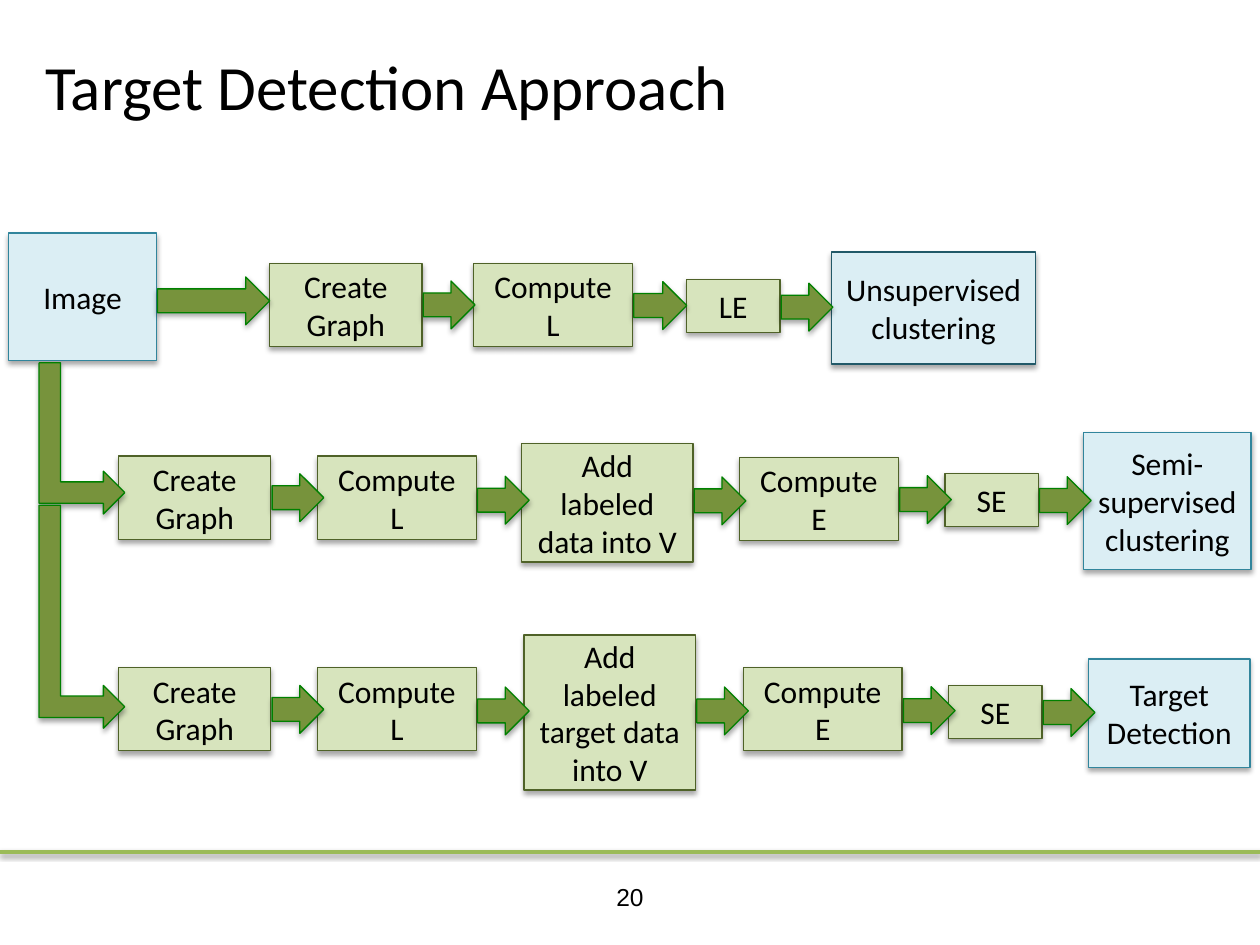
"""Build the target detection approach slide."""
from dataclasses import dataclass

from lxml import etree
from pptx import Presentation
from pptx.dml.color import RGBColor
from pptx.enum.shapes import MSO_CONNECTOR, MSO_SHAPE
from pptx.enum.text import MSO_ANCHOR, PP_ALIGN
from pptx.oxml.ns import qn
from pptx.util import Inches, Pt

RECTANGLE = MSO_SHAPE.RECTANGLE
RIGHT_ARROW = MSO_SHAPE.RIGHT_ARROW
BENT_ARROW = MSO_SHAPE.BENT_UP_ARROW
STRAIGHT = MSO_CONNECTOR.STRAIGHT
TOP, MIDDLE = MSO_ANCHOR.TOP, MSO_ANCHOR.MIDDLE
LEFT, CENTER = PP_ALIGN.LEFT, PP_ALIGN.CENTER

COLUMNS, ROWS = 100, 75


@dataclass(frozen=True)
class Theme:
    """Colours, fonts and sizes of the slide."""
    ink: str = "000000"
    background: str = "FFFFFF"
    rule: str = "9BBB59"
    step: tuple = ("D7E4BD", "4F6228")
    endpoint: tuple = ("DBEEF4", "31859C")
    unsupervised: tuple = ("DBEEF4", "215968")
    arrow: tuple = ("77933C", "008000")
    font: str = "Calibri"
    number_font: str = "Arial"
    title_size: int = 36
    body_size: int = 18
    number_size: int = 14
    outline: float = 0.75
    rule_width: float = 2


@dataclass(frozen=True)
class Box:
    """One labelled stage, placed in grid columns and rows."""
    label: str
    left: float
    top: float
    width: float
    height: float
    colors: tuple

    @property
    def right(self):
        """Return the column of the right edge."""
        return self.left + self.width

    @property
    def middle(self):
        """Return the row of the vertical centre."""
        return self.top + self.height / 2


class SlideBuilder:
    """Hold the theme and the current slide, and draw each kind of element."""

    arrow_length = 4.1
    arrow_height = 3.8
    arrow_gap = 0.1

    def __init__(self, presentation, theme):
        """Add a blank slide and work out the grid cell."""
        self.theme = theme
        self.slide = presentation.slides.add_slide(presentation.slide_layouts[6])
        self.cell_width = presentation.slide_width / COLUMNS
        self.cell_height = presentation.slide_height / ROWS
        fill = self.slide.background.fill
        fill.solid()
        fill.fore_color.rgb = RGBColor.from_string(theme.background)

    def place(self, left, top, width, height):
        """Turn grid columns and rows into slide lengths."""
        return (round(left * self.cell_width), round(top * self.cell_height),
                round(width * self.cell_width), round(height * self.cell_height))

    def shadow(self, element, opacity=35, distance=1.8):
        """Give a shape or connector a soft shadow below it."""
        effects = etree.SubElement(element.spPr, qn("a:effectLst"))
        outer = etree.SubElement(
            effects, qn("a:outerShdw"), blurRad=str(Pt(3.1)),
            dist=str(Pt(distance)), dir="5400000", rotWithShape="0")
        color = etree.SubElement(outer, qn("a:srgbClr"), val=self.theme.ink)
        etree.SubElement(color, qn("a:alpha"), val=str(opacity * 1000))

    def label(self, shape, text, size, font, align=CENTER, anchor=MIDDLE):
        """Put one run of text into a shape."""
        frame = shape.text_frame
        frame.word_wrap = True
        frame.vertical_anchor = anchor
        paragraph = frame.paragraphs[0]
        paragraph.alignment = align
        run = paragraph.add_run()
        run.text = text
        run.font.name = font
        run.font.size = Pt(size)
        run.font.color.rgb = RGBColor.from_string(self.theme.ink)

    def text(self, text, area, size, font, align, anchor):
        """Add a text box."""
        shape = self.slide.shapes.add_textbox(*self.place(*area))
        self.label(shape, text, size, font, align, anchor)

    def shape(self, kind, area, colors):
        """Add a filled, outlined and shadowed preset shape."""
        shape = self.slide.shapes.add_shape(kind, *self.place(*area))
        fill, line = map(RGBColor.from_string, colors)
        shape.fill.solid()
        shape.fill.fore_color.rgb = fill
        shape.line.color.rgb = line
        shape.line.width = Pt(self.theme.outline)
        self.shadow(shape.element)
        return shape

    def box(self, box):
        """Add a labelled stage."""
        area = (box.left, box.top, box.width, box.height)
        shape = self.shape(RECTANGLE, area, box.colors)
        self.label(shape, box.label, self.theme.body_size, self.theme.font)

    def arrow(self, source, target):
        """Add a block arrow from one stage to the next."""
        left = source.right + self.arrow_gap
        length = max(self.arrow_length, target.left - left)
        top = (source.middle + target.middle - self.arrow_height) / 2
        self.shape(RIGHT_ARROW, (left, top, length, self.arrow_height),
                   self.theme.arrow)

    def flow(self, boxes):
        """Add a row of new stages and the arrows between them."""
        for box in boxes:
            self.box(box)
        for source, target in zip(boxes, boxes[1:]):
            self.arrow(source, target)

    def branch(self, left, top, width, height):
        """Add an arrow that runs down and then turns right."""
        area = (left + (width - height) / 2, top + (height - width) / 2,
                height, width)
        self.shape(BENT_ARROW, area, self.theme.arrow).rotation = 90

    def rule(self, row):
        """Add a horizontal line across the slide."""
        _, y, right, _ = self.place(0, row, COLUMNS, 0)
        line = self.slide.shapes.add_connector(STRAIGHT, 0, y, right, y)
        line.line.color.rgb = RGBColor.from_string(self.theme.rule)
        line.line.width = Pt(self.theme.rule_width)
        self.shadow(line.element, opacity=38, distance=1.6)


def main():
    """Draw the slide and save it."""
    presentation = Presentation()
    presentation.slide_width = Inches(10)
    presentation.slide_height = Inches(7.5)
    theme = Theme()
    builder = SlideBuilder(presentation, theme)
    step, endpoint = theme.step, theme.endpoint

    builder.rule(67.6)
    builder.text("Target Detection Approach", (2.6, 1.5, 88.1, 10.6),
                 theme.title_size, theme.font, LEFT, MIDDLE)
    builder.text("20", (45.7, 69.5, 8.6, 4), theme.number_size,
                 theme.number_font, CENTER, TOP)

    builder.flow([
        Box("Image", 0.7, 18.5, 11.7, 10.1, endpoint),
        Box("Create Graph", 21.4, 20.9, 12.1, 6.6, step),
        Box("Compute L", 37.6, 20.9, 12.6, 6.6, step),
        Box("LE", 54.5, 22.2, 7.4, 4.2, step),
        Box("Unsupervised clustering", 66, 20, 16.2, 8.9, theme.unsupervised),
    ])
    builder.flow([
        Box("Create Graph", 9.4, 36.2, 12.1, 6.6, step),
        Box("Compute L", 25.2, 36.2, 12.6, 6.6, step),
        Box("Add labeled data into V", 41.4, 35.2, 13.6, 9.4, step),
        Box("Compute E", 58.7, 36.3, 12.6, 6.6, step),
        Box("SE", 75, 37.6, 7.4, 4.2, step),
        Box("Semi-supervised clustering", 86, 34.3, 13.3, 10.9, endpoint),
    ])
    builder.flow([
        Box("Create Graph", 9.4, 53, 12.1, 6.6, step),
        Box("Compute L", 25.2, 53, 12.6, 6.6, step),
        Box("Add labeled target data into V", 41.6, 50.4, 13.6, 12.3, step),
        Box("Compute E", 59, 53, 12.6, 6.6, step),
        Box("SE", 75.3, 54.4, 7.4, 4.2, step),
        Box("Target Detection", 86.4, 52.3, 12.8, 8.6, endpoint),
    ])
    for top, height in ((28.8, 12), (40.1, 17.7)):
        builder.branch(3.1, top, 6.8, height)

    presentation.save("out.pptx")


if __name__ == "__main__":
    main()
